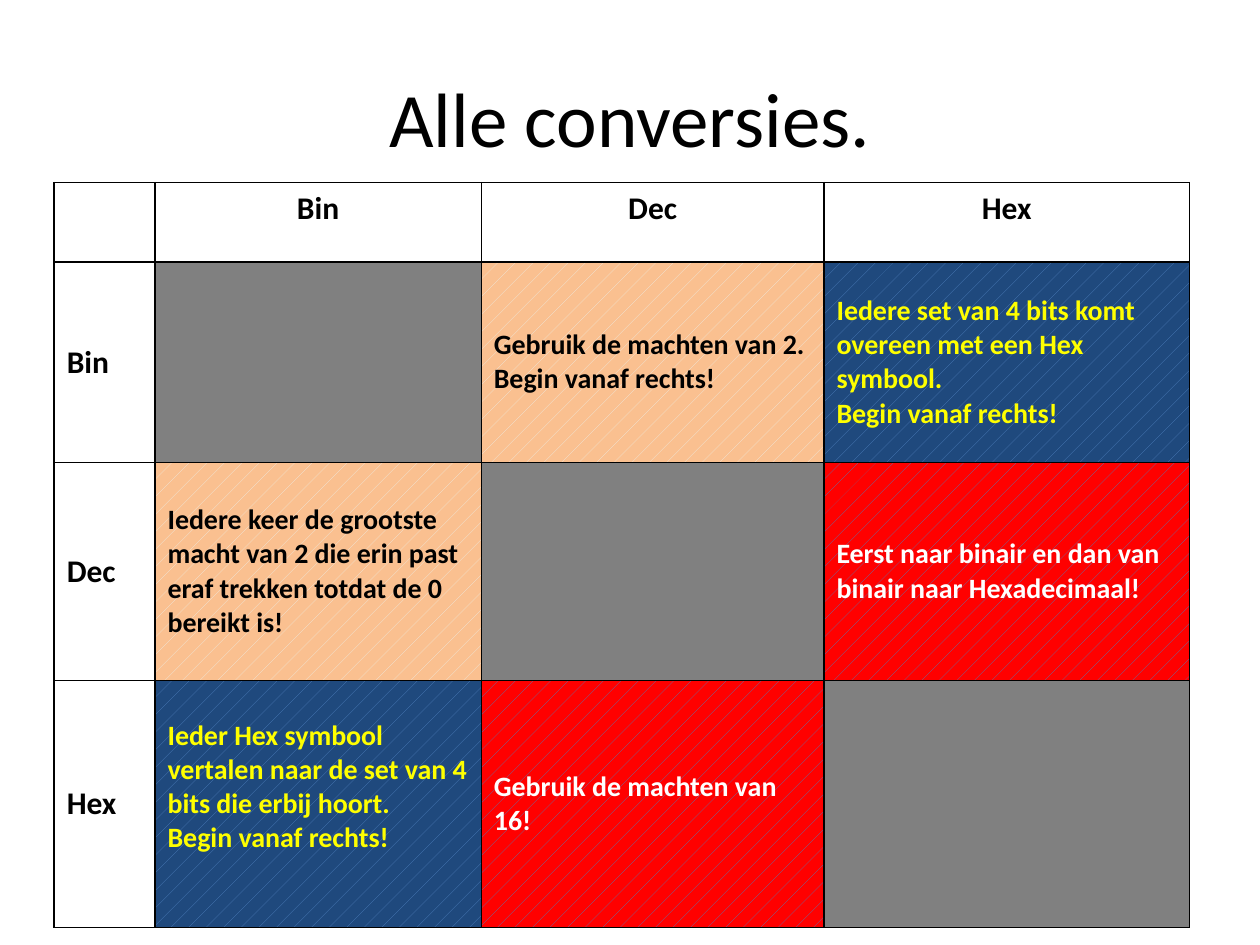
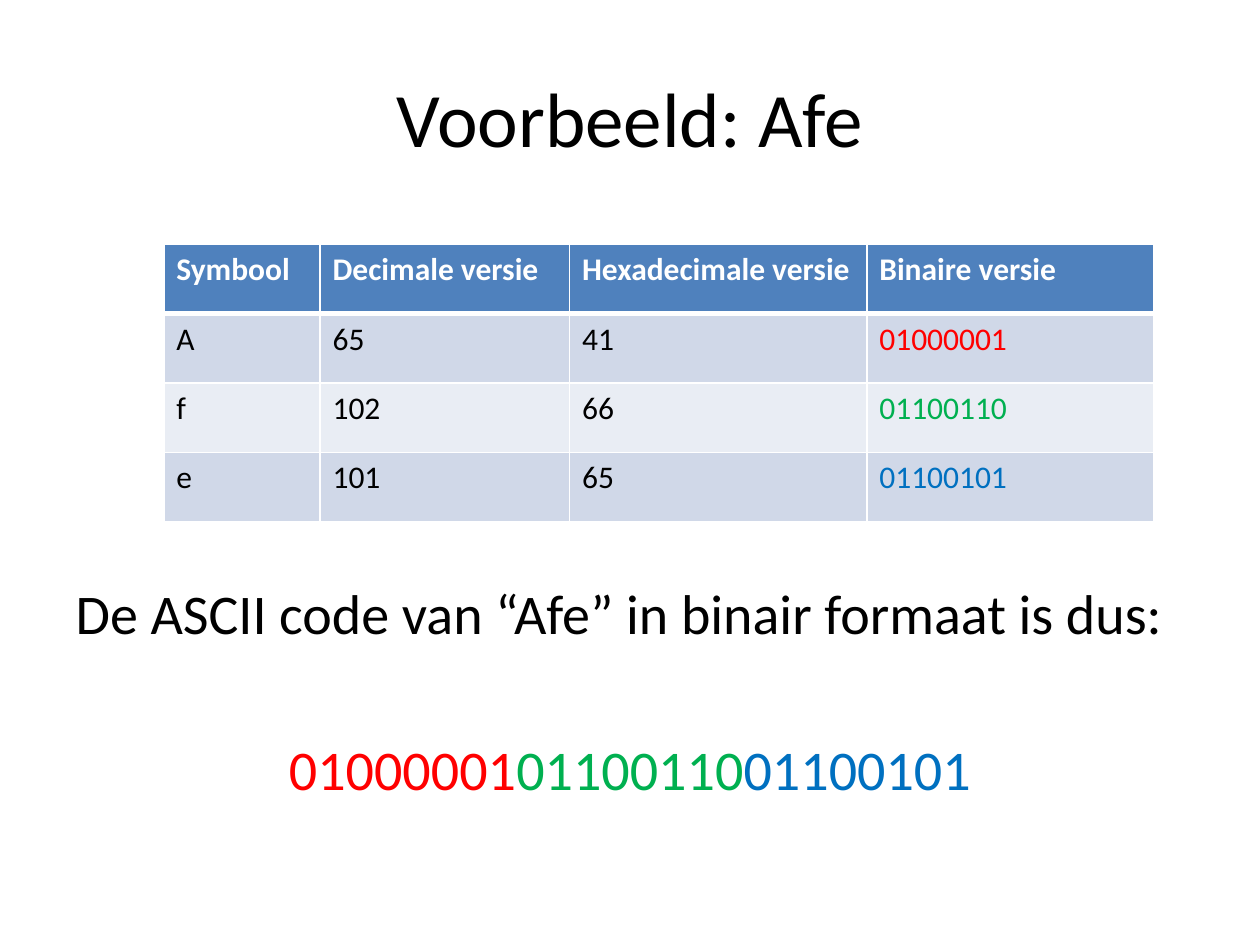
from dataclasses import dataclass
from typing import Any, Optional

import pptx
import pptx.dml.color
import pptx.enum.dml
import pptx.enum.text
import pptx.oxml.ns
import pptx.util
from lxml import etree

# Shared format: a grid of 100 columns by 75 rows, one font, one palette
WIDTH, HEIGHT = pptx.util.Inches(10), pptx.util.Inches(7.5)
COLUMN, ROW = WIDTH / 100, HEIGHT / 75
FONT = "Calibri"
BLACK, WHITE, GREY = "000000", "FFFFFF", "808080"
YELLOW, RED, GREEN, BLUE = "FFFF00", "FF0000", "00B050", "0070C0"
HEADER, BAND_DARK, BAND_LIGHT = "4F81BD", "D0D8E8", "E9EDF4"
CENTER = pptx.enum.text.PP_ALIGN.CENTER
MIDDLE = pptx.enum.text.MSO_ANCHOR.MIDDLE
TOP = pptx.enum.text.MSO_ANCHOR.TOP


@dataclass(frozen=True)
class Box:
    """A place on the grid, in columns and rows."""
    left: float
    top: float
    width: float
    height: float

    def lengths(self) -> dict[str, int]:
        return {"left": round(self.left * COLUMN), "top": round(self.top * ROW),
                "width": round(self.width * COLUMN), "height": round(self.height * ROW)}


@dataclass(frozen=True)
class Hatch:
    front: str
    back: str


@dataclass(frozen=True)
class Entry:
    """Content and look of one table cell."""
    lines: tuple[str, ...] = ()
    fill: Any = None
    color: str = BLACK
    size: float = 18
    bold: bool = True
    align: Any = None
    anchor: Any = MIDDLE
    lift: float = 0  # extra bottom margin, in rows
    rule_below: float = 1


@dataclass(frozen=True)
class Grid:
    box: Box
    columns: tuple[float, ...]
    rows: tuple[float, ...]
    border: str
    entries: list[list[Entry]]


TITLE_BOX = Box(5, 3, 90, 12.5)


def rgb(color: str) -> pptx.dml.color.RGBColor:
    return pptx.dml.color.RGBColor.from_string(color)


def apply(target: Any, values: dict[str, Any]) -> None:
    for name, value in values.items():
        setattr(target, name, value)


def write(paragraph: Any, text: str, size: float, color: str = BLACK, bold: bool = False) -> None:
    run = paragraph.add_run()
    run.text = text
    apply(run.font, {"name": FONT, "size": pptx.util.Pt(size), "bold": bold})
    run.font.color.rgb = rgb(color)


def add_title(slide: Any, text: str) -> None:
    title = slide.shapes.title
    apply(title, TITLE_BOX.lengths())
    title.text_frame.vertical_anchor = MIDDLE
    heading = title.text_frame.paragraphs[0]
    heading.alignment = CENTER
    write(heading, text, 44)


def draw_borders(cell: Any, color: str, widths: dict[str, float]) -> None:
    properties = cell._tc.get_or_add_tcPr()
    for side, points in widths.items():
        line = etree.SubElement(properties, pptx.oxml.ns.qn(f"a:ln{side}"),
                                w=str(pptx.util.Pt(points)))
        solid = etree.SubElement(line, pptx.oxml.ns.qn("a:solidFill"))
        etree.SubElement(solid, pptx.oxml.ns.qn("a:srgbClr"), val=color)


def paint(fill: Any, look: Any) -> None:
    if look is None:
        fill.background()
    elif isinstance(look, Hatch):
        fill.patterned()
        fill.pattern = pptx.enum.dml.MSO_PATTERN.PERCENT_5
        fill.fore_color.rgb = rgb(look.front)
        fill.back_color.rgb = rgb(look.back)
    else:
        fill.solid()
        fill.fore_color.rgb = rgb(look)


def fill_cell(cell: Any, entry: Entry, border: str, rule_above: float) -> None:
    draw_borders(cell, border, {"L": 1, "R": 1, "T": rule_above, "B": entry.rule_below})
    paint(cell.fill, entry.fill)
    cell.vertical_anchor = entry.anchor
    if entry.lift:
        cell.margin_bottom = round(entry.lift * ROW)
    for index, line in enumerate(entry.lines):
        frame = cell.text_frame
        paragraph = frame.add_paragraph() if index else frame.paragraphs[0]
        paragraph.alignment = entry.align
        write(paragraph, line, entry.size, entry.color, entry.bold)


def add_grid(slide: Any, grid: Grid) -> None:
    table = slide.shapes.add_table(len(grid.rows), len(grid.columns),
                                   **grid.box.lengths()).table
    apply(table, {"first_row": False, "horz_banding": False})
    for column, width in zip(table.columns, grid.columns):
        column.width = round(width * COLUMN)
    for row, height in zip(table.rows, grid.rows):
        row.height = round(height * ROW)
    for r, entries in enumerate(grid.entries):
        for c, entry in enumerate(entries):
            above = grid.entries[r - 1][c].rule_below if r else 1
            fill_cell(table.cell(r, c), entry, grid.border, above)


# Slide 1: conversion matrix
def heading(text: str) -> Entry:
    return Entry((text,), align=CENTER, anchor=TOP)


def powers(text: str) -> Entry:
    return Entry((text,), Hatch("EEECE1", "FAC090"), size=16)


def bit_sets(text: str, lift: float = 0) -> Entry:
    return Entry((text, "Begin vanaf rechts!"), Hatch(HEADER, "1F497D"), YELLOW, 16, lift=lift)


def hex_steps(text: str) -> Entry:
    return Entry((text,), Hatch(HEADER, RED), WHITE, 16)


def build_conversions(slide: Any) -> None:
    add_title(slide, "Alle conversies.")
    systems = ("Bin", "Dec", "Hex")
    same = Entry(fill=GREY)
    methods = [
        [same,
         powers("Gebruik de machten van 2. Begin vanaf rechts!"),
         bit_sets("Iedere set van 4 bits komt overeen met een Hex symbool.")],
        [powers("Iedere keer de grootste macht van 2 die erin past eraf trekken "
                "totdat de 0 bereikt is!"),
         same,
         hex_steps("Eerst naar binair en dan van binair naar Hexadecimaal!")],
        [bit_sets("Ieder Hex symbool vertalen naar de set van 4 bits die erbij hoort.", 3.2),
         hex_steps("Gebruik de machten van 16!"),
         same],
    ]
    entries = [[Entry(), *map(heading, systems)]]
    entries += [[Entry((name,)), *row] for name, row in zip(systems, methods)]
    add_grid(slide, Grid(Box(4.3, 14.5, 90.1, 59.1), (8, 25.9, 27.2, 29),
                         (6.3, 15.9, 17.3, 19.6), BLACK, entries))


# Slide 2: worked example
LETTERS = (
    ("A", "65", "41", "01000001", RED),
    ("f", "102", "66", "01100110", GREEN),
    ("e", "101", "65", "01100101", BLUE),
)


def add_answer(slide: Any) -> None:
    body = slide.placeholders[1]
    apply(body, Box(5, 45.4, 90, 21.6).lengths())
    question = body.text_frame.paragraphs[0]
    write(question, "De ASCII code van “Afe” in binair formaat is dus:", 32)
    answer = body.text_frame.add_paragraph()
    apply(answer, {"alignment": CENTER, "space_before": pptx.util.Pt(51)})
    for *_, binary, color in LETTERS:
        write(answer, binary, 32, color)
    for paragraph in (question, answer):
        properties = paragraph._p.get_or_add_pPr()
        for name in ("marL", "indent"):
            properties.set(name, "0")
        etree.SubElement(properties, pptx.oxml.ns.qn("a:buNone"))


def letter_row(index: int, letter: tuple[str, ...]) -> list[Entry]:
    *values, color = letter
    band = BAND_LIGHT if index % 2 else BAND_DARK
    colors = (BLACK, BLACK, BLACK, color)
    return [Entry((value,), band, ink, bold=False, anchor=TOP)
            for value, ink in zip(values, colors)]


def build_example(slide: Any) -> None:
    add_title(slide, "Voorbeeld: Afe")
    add_answer(slide)
    names = ("Symbool", "Decimale versie", "Hexadecimale versie", "Binaire versie")
    entries = [[Entry((name,), HEADER, WHITE, anchor=TOP, rule_below=3) for name in names]]
    entries += [letter_row(index, letter) for index, letter in enumerate(LETTERS)]
    add_grid(slide, Grid(Box(13, 19.4, 78.6, 22), (12.4, 19.8, 23.6, 22.8),
                         (5.5,) * 4, WHITE, entries))


def main() -> None:
    deck = pptx.Presentation()
    apply(deck, {"slide_width": WIDTH, "slide_height": HEIGHT})
    title_only, title_and_body = deck.slide_layouts[5], deck.slide_layouts[1]
    for layout, build in ((title_only, build_conversions), (title_and_body, build_example)):
        build(deck.slides.add_slide(layout))
    deck.save("out.pptx")


if __name__ == "__main__":
    main()
